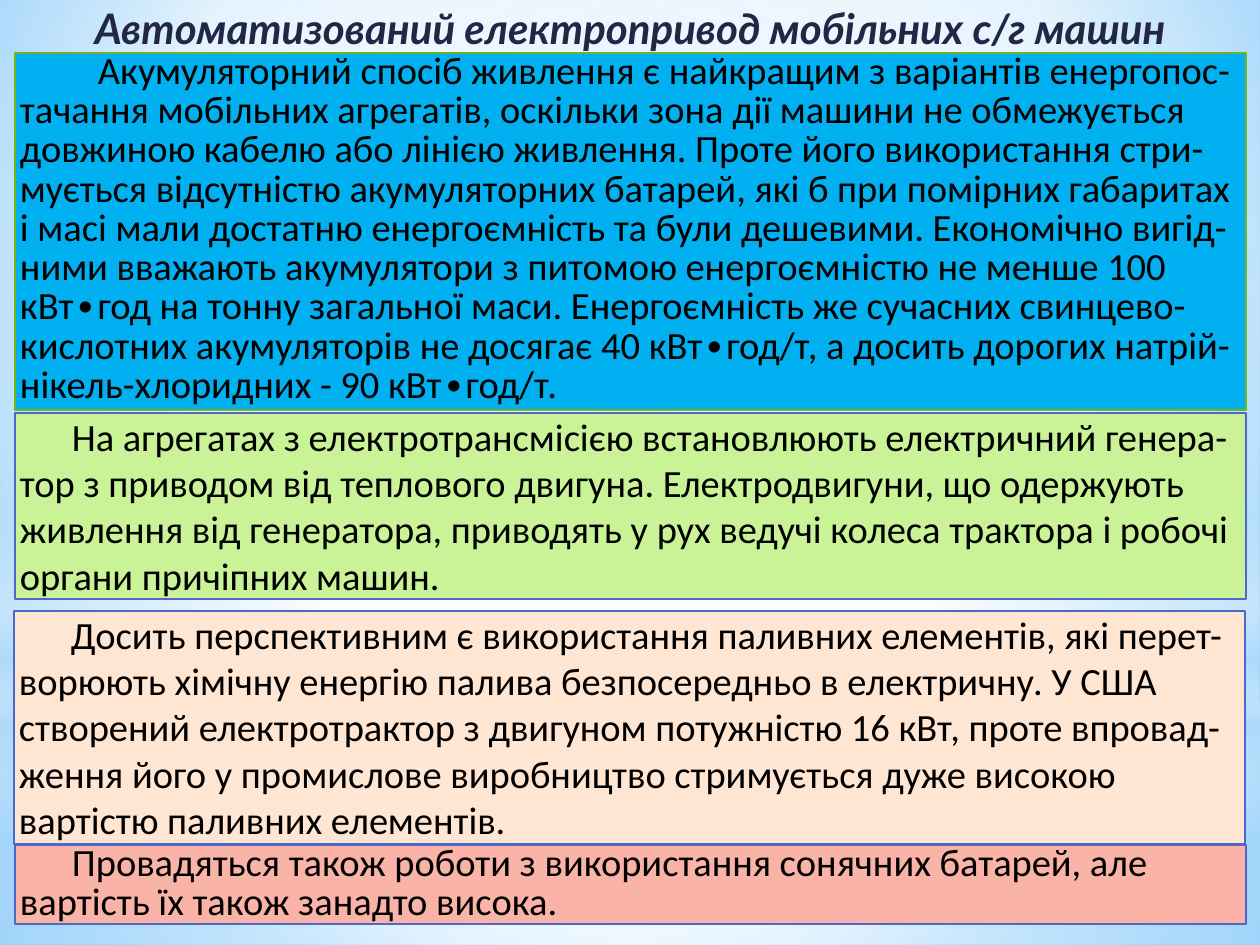
"""Builds a slide on automated electric drives of mobile farm machines."""
import pptx
import pptx.util
import pptx.dml.color
import pptx.enum.shapes
import pptx.enum.text
import pptx.oxml
import pptx.oxml.ns

RGB = pptx.dml.color.RGBColor
KIND = pptx.enum.shapes.MSO_SHAPE
TEXT = pptx.enum.text
SCALE = 914400 / 126
WIDE, HIGH = 1260, 945

NAVY = RGB(0x21, 0x27, 0x45)
BLACK = RGB(0x00, 0x00, 0x00)
WHITE = RGB(0xFF, 0xFF, 0xFF)
PALE = RGB(0xB4, 0xDC, 0xFA)
SKY = RGB(0x9E, 0xD5, 0xFF)
AZURE = RGB(0x5B, 0xB9, 0xFF)
BLUE = RGB(0x00, 0xB0, 0xF0)
LIME = RGB(0xCA, 0xF2, 0x97)
PEACH = RGB(0xFF, 0xE6, 0xD3)
ROSE = RGB(0xF9, 0xB3, 0xA7)
GREEN = RGB(0x72, 0xB4, 0x1D)
INDIGO = RGB(0x4E, 0x67, 0xC8)

CENTRE = (50, 50, 50, 50)
GLOWS = [
    (KIND.RECTANGLE, (0, 703, WIDE, 242),
     [(0, WHITE, 91), (37, WHITE, 76), (100, PALE, 79)], CENTRE),
    (KIND.RECTANGLE, (0, 0, WIDE, 703),
     [(0, WHITE, 89), (48, WHITE, 62), (100, PALE, 79)], CENTRE),
    (KIND.RECTANGLE, (0, 519, WIDE, 315),
     [(0, WHITE, 0), (29, WHITE, 30), (45, PALE, 40), (55, WHITE, 26),
      (65, PALE, 60), (100, WHITE, 0)], None),
    (KIND.OVAL, (0, 220, WIDE, 703),
     [(0, WHITE, 100), (56, WHITE, 0)], CENTRE),
]

HEAD = "Автоматизований електропривод мобільних с/г машин"
NOTES = [
    ((15, 53, 1231, 357), BLUE, GREEN, 78, 0.85,
     "Акумуляторний спосіб живлення є найкращим з варіантів "
     "енергопос-тачання мобільних агрегатів, оскільки зона дії машини не "
     "обмежується довжиною кабелю або лінією живлення. Проте його "
     "використання стри-мується відсутністю акумуляторних батарей, які б "
     "при помірних габаритах і масі мали достатню енергоємність та були "
     "дешевими. Економічно вигід-ними вважають акумулятори з питомою "
     "енергоємністю не менше 100 кВт∙год на тонну загальної маси. "
     "Енергоємність же сучасних свинцево-кислотних акумуляторів не досягає "
     "40 кВт∙год/т, а досить дорогих натрій-нікель-хлоридних - "
     "90 кВт∙год/т."),
    ((15, 413, 1231, 186), LIME, INDIGO, 52, None,
     "На агрегатах з електротрансмісією встановлюють електричний "
     "генера-тор з приводом від теплового двигуна. Електродвигуни, що "
     "одержують живлення від генератора, приводять у рух ведучі колеса "
     "трактора і робочі органи причіпних машин."),
    ((14, 611, 1231, 233), PEACH, INDIGO, 52, None,
     "Досить перспективним є використання паливних елементів, які "
     "перет-ворюють хімічну енергію палива безпосередньо в електричну. "
     "У США створений електротрактор з двигуном потужністю 16 кВт, проте "
     "впровад-ження його у промислове виробництво стримується дуже високою "
     "вартістю паливних елементів."),
    ((15, 845, 1231, 79), ROSE, INDIGO, 52, 0.85,
     "Провадяться також роботи з використання сонячних батарей, але "
     "вартість їх також занадто висока."),
]


def px(size):
    """Turn pixels into EMU."""
    return pptx.util.Emu(round(size * SCALE))


def blend(fill, node, stops, focus):
    """Give a fill a gradient: round about a focus, or else running down."""
    fill.gradient()
    old = node.find(".//" + pptx.oxml.ns.qn("a:gradFill"))
    marks = "".join(
        f'<a:gs pos="{spot * 1000}"><a:srgbClr val="{tint}">'
        f'<a:alpha val="{alpha * 1000}"/></a:srgbClr></a:gs>'
        for spot, tint, alpha in stops)
    if focus:
        edges = " ".join(f'{side}="{part * 1000}"'
                         for side, part in zip("ltrb", focus))
        way = f'<a:path path="circle"><a:fillToRect {edges}/></a:path>'
    else:
        way = '<a:lin ang="5400000" scaled="0"/>'
    space = pptx.oxml.ns.nsdecls("a")
    old.getparent().replace(old, pptx.oxml.parse_xml(
        f'<a:gradFill {space} rotWithShape="1"><a:gsLst>{marks}</a:gsLst>'
        f'{way}</a:gradFill>'))


def shape(slide, kind, box):
    """Add a preset shape without shadow."""
    item = slide.shapes.add_shape(kind, *map(px, box))
    item.shadow.inherit = False
    return item


def glow(slide, kind, box, stops, focus):
    """Add a soft shape to the backdrop."""
    item = shape(slide, kind, box)
    item.line.fill.background()
    blend(item.fill, item._element, stops, focus)


def write(item, words, face, size, tint, align, side=0, space=None):
    """Put one paragraph into a shape and return it with its run."""
    frame = item.text_frame
    frame.word_wrap = True
    frame.auto_size = TEXT.MSO_AUTO_SIZE.NONE
    frame.vertical_anchor = TEXT.MSO_ANCHOR.TOP
    frame.margin_left = frame.margin_right = px(side)
    frame.margin_top = frame.margin_bottom = 0
    para = frame.paragraphs[0]
    para.alignment = align
    para.line_spacing = space or 1.0
    para.space_before = pptx.util.Pt(0)
    run = para.add_run()
    run.text = words
    run.font.name = face
    run.font.size = pptx.util.Pt(size)
    run.font.color.rgb = tint
    return para, run


def title(slide, words, box):
    """Fill the title placeholder and bring it in front of the backdrop."""
    item = slide.shapes.title
    item.left, item.top, item.width, item.height = map(px, box)
    run = write(item, words, "Lato", 24, NAVY,
                TEXT.PP_ALIGN.CENTER, space=0.85)[1]
    run.font.bold = run.font.italic = run.font.underline = True
    slide.shapes._spTree.append(item._element)


def note(slide, box, tint, edge, indent, space, words):
    """Add a framed box with one indented paragraph."""
    item = shape(slide, KIND.RECTANGLE, box)
    item.fill.solid()
    item.fill.fore_color.rgb = tint
    item.line.color.rgb = edge
    item.line.width = pptx.util.Pt(1.25)
    para = write(item, words, "Calibri", 22, BLACK,
                 TEXT.PP_ALIGN.LEFT, 5, space)[0]
    para._p.get_or_add_pPr().set("indent", str(px(indent)))


def main():
    """Build and save the slide."""
    deck = pptx.Presentation()
    deck.slide_width, deck.slide_height = px(WIDE), px(HIGH)
    slide = deck.slides.add_slide(deck.slide_layouts[5])
    blend(slide.background.fill, slide._element,
          [(0, SKY, 100), (60, WHITE, 100), (100, AZURE, 100)],
          (20, 10, 20, 60))
    for item in GLOWS:
        glow(slide, *item)
    title(slide, HEAD, (15, 10, 1230, 43))
    for item in NOTES:
        note(slide, *item)
    deck.save("out.pptx")


if __name__ == "__main__":
    main()
